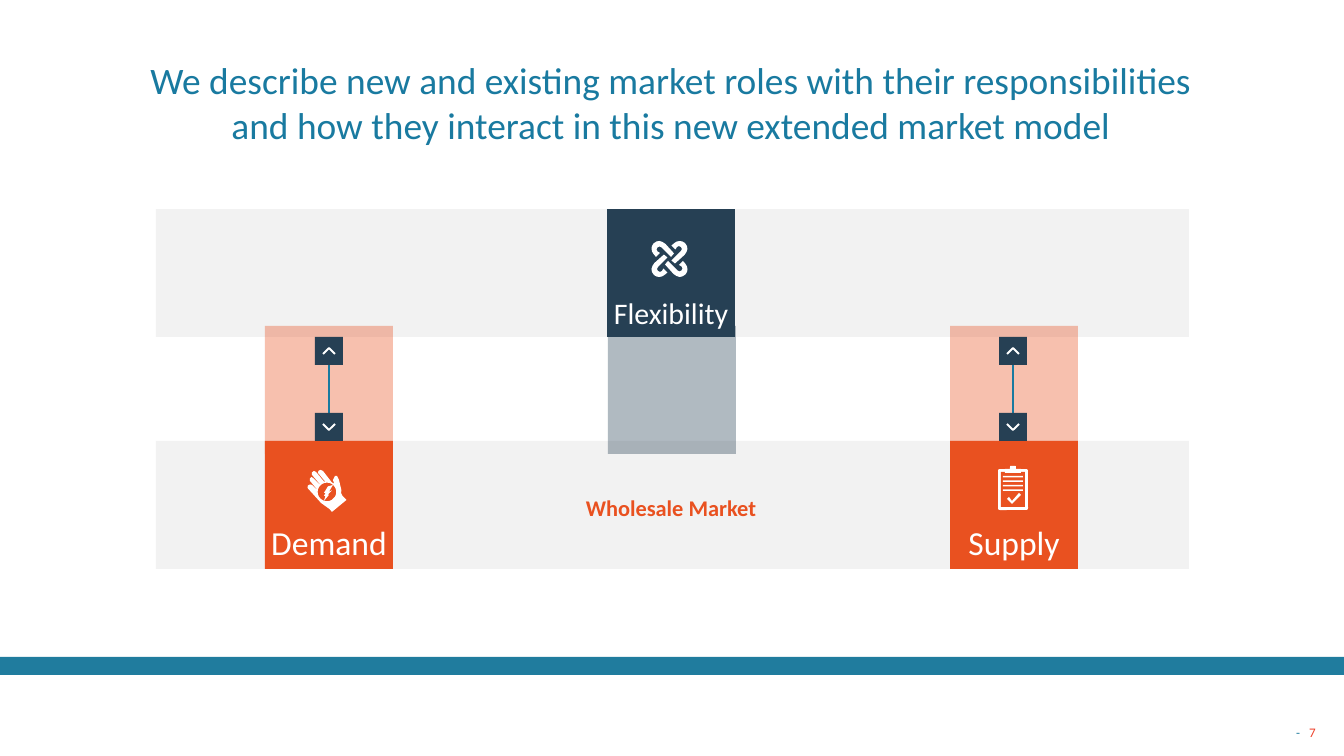
from lxml.etree import SubElement
from pptx import Presentation
from pptx.dml.color import RGBColor
from pptx.enum.shapes import MSO_CONNECTOR, MSO_SHAPE as SHAPE
from pptx.enum.text import MSO_ANCHOR as ANCHOR, MSO_AUTO_SIZE, PP_ALIGN as ALIGN
from pptx.oxml.ns import qn
from pptx.util import Pt

PX = 914400 / 134.4  # EMU per pixel
FONT = "Calibri"
HEX = {"teal": "197AA0", "bar": "207C9E", "band": "F2F2F2", "orange": "E95120",
       "navy": "264054", "white": "FFFFFF", "red": "EE3E27"}
COLOR = {name: RGBColor.from_string(value) for name, value in HEX.items()}

prs = Presentation()
prs.slide_width, prs.slide_height = round(1344 * PX), round(756 * PX)
shapes = prs.slides.add_slide(prs.slide_layouts[6]).shapes


def block(x, y, w, h, fill, kind=SHAPE.RECTANGLE):
    shape = shapes.add_shape(kind, *(round(v * PX) for v in (x, y, w, h)))
    shape.shadow.inherit = False
    shape.fill.solid()
    shape.fill.fore_color.rgb = COLOR[fill]
    shape.line.fill.background()
    return shape


def outline(points, closed=True):
    """Draw a white filled polygon, or a white open line when not closed."""
    corners = [(round(x * PX), round(y * PX)) for x, y in points]
    builder = shapes.build_freeform(*corners[0])
    builder.add_line_segments(corners[1:], close=closed)
    shape = builder.convert_to_shape()
    shape.shadow.inherit = False
    if closed:
        shape.fill.solid()
        shape.fill.fore_color.rgb = COLOR["white"]
        shape.line.fill.background()
    else:
        shape.fill.background()
        shape.line.color.rgb = COLOR["white"]
        shape.line.width = Pt(1)


# Footer bar and the two market bands
block(0, 657, 1344, 18, "bar")
for band_top in (441, 209):
    block(156, band_top, 1033, 128, "band")

# Translucent columns between the bands
for left, color in ((265, "orange"), (950, "orange"), (608, "navy")):
    column = block(left, 326, 128, 128, color)
    srgb = column._element.spPr.find(".//" + qn("a:srgbClr"))
    SubElement(srgb, qn("a:alpha"), val="36000")

# Role tiles
for role, left, top, color, size in (("Flexibility", 607, 209, "navy", 16),
                                     ("Demand", 265, 441, "orange", 18),
                                     ("Supply", 950, 441, "orange", 18)):
    tile = block(left, top, 128, 128, color).text_frame
    tile.text = role
    tile.margin_left = tile.margin_right = 0
    tile.vertical_anchor = ANCHOR.BOTTOM
    label = tile.paragraphs[0]
    label.alignment = ALIGN.CENTER
    label.font.name, label.font.size = FONT, Pt(size)
    label.font.color.rgb = COLOR["white"]

# Flexibility icon: one link turned four times about its centre
link = [(-13.5, -2), (-9.5, -6), (-12, -7.5), (-13, -9.5), (-12, -11.5), (-10, -12.5),
        (-8, -11.5), (1.5, -2), (4.5, -5.5), (-4, -15), (-7, -17), (-10, -18),
        (-13, -17.5), (-16, -15.5), (-17.5, -13), (-18, -10.5), (-17.5, -7.5), (-16, -5)]
for turn in range(4):
    outline([(669.5 + x, 259 + y) for x, y in link])
    link = [(-y, x) for x, y in link]

# Demand icon: hand holding a power disc
outline([(337, 476), (335, 476), (333, 480), (334, 483), (333, 484), (323, 471),
         (320.5, 470), (318.5, 471), (318, 473), (328.5, 485.5), (328, 486.5), (316, 472),
         (314, 471), (312, 472.5), (312, 475), (324, 489), (313, 478), (311.5, 477),
         (310, 478.5), (310, 481), (320, 493), (312, 485), (310, 484.5), (308, 485.5),
         (307.5, 488), (321, 503), (326.5, 507), (329.5, 509), (332, 512), (346.5, 500),
         (342.5, 496), (341, 493), (341.5, 490.5), (339, 480)])
disc = block(317, 482, 20, 20, "orange", SHAPE.OVAL)
disc.line.color.rgb = COLOR["white"]
disc.line.width = Pt(0.75)
outline([(329, 492), (333, 485), (328, 486.5), (324, 493), (325.5, 493), (324, 496),
         (325.5, 496), (324, 501), (329, 495), (328, 494.5), (332, 490.5)])

# Supply icon: clipboard with a check mark
block(998, 469, 30, 41, "white", SHAPE.ROUNDED_RECTANGLE).adjustments[0] = 0.06
block(1001, 472, 24, 35, "orange")
block(1005, 469, 16, 4, "white")
block(1010, 466, 6, 5, "white", SHAPE.ROUNDED_RECTANGLE)
for row in range(4):
    block(1003, 476 + 4.5 * row, 20, 1.5, "white")
outline([(1007, 499), (1009, 497), (1012, 501), (1019, 493), (1021, 495), (1012, 504)])

# Two-way links between the bands
for center in (329, 1013):
    link_line = shapes.add_connector(
        MSO_CONNECTOR.STRAIGHT, *(round(v * PX) for v in (center, 337, center, 441)))
    link_line.line.color.rgb = COLOR["teal"]
    link_line.line.width = Pt(1)
    SubElement(link_line._element.spPr, qn("a:effectLst"))
    for end_top, direction in ((337, -1), (413, 1)):
        block(center - 14, end_top, 28, 28, "navy")
        middle = end_top + 14
        outline([(center - 6, middle - 3 * direction), (center, middle + 3 * direction),
                 (center + 6, middle - 3 * direction)], closed=False)

# Market name and title
for lines, box, size, color, bold in (
        (["Wholesale Market"], (497, 488, 348, 40), 12, "orange", True),
        (["We describe new and existing market roles with their responsibilities",
          "and how they interact in this new extended market model"],
         (54, 51, 1234, 104), 20, "teal", False)):
    frame = shapes.add_textbox(*(round(v * PX) for v in box)).text_frame
    frame.word_wrap = True
    frame.auto_size = MSO_AUTO_SIZE.SHAPE_TO_FIT_TEXT
    frame.text = "\n".join(lines)
    for line in frame.paragraphs:
        line.alignment = ALIGN.CENTER
        line.font.name, line.font.size, line.font.bold = FONT, Pt(size), bold
        line.font.color.rgb = COLOR[color]

# Page number, with a tab between dash and figure
frame = shapes.add_textbox(*(round(v * PX) for v in (1154, 693, 175, 54))).text_frame
frame.word_wrap = True
frame.vertical_anchor = ANCHOR.BOTTOM
frame.margin_left = round(142 * PX)
page = frame.paragraphs[0]
page.line_spacing = 0.93
tabs = SubElement(page._p.get_or_add_pPr(), qn("a:tabLst"))
SubElement(tabs, qn("a:tab"), pos=str(round(13 * PX)), algn="l")
page.font.name, page.font.size = FONT, Pt(7)
for text, color in (("-\t", "bar"), ("7", "red")):
    run = page.add_run()
    run.text = text
    run.font.color.rgb = COLOR[color]

prs.save("out.pptx")
